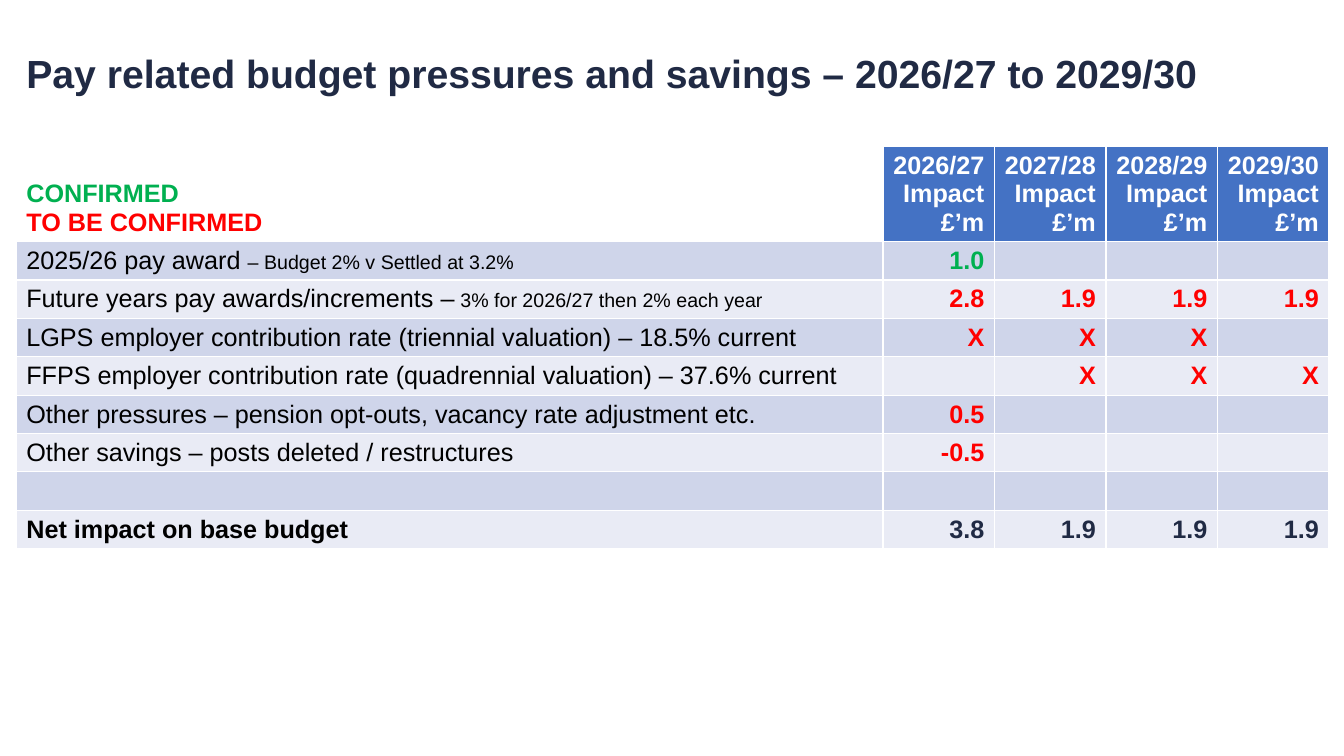
from lxml.etree import SubElement
from pptx import Presentation
from pptx.dml.color import RGBColor
from pptx.enum.text import MSO_ANCHOR, MSO_AUTO_SIZE, PP_ALIGN
from pptx.oxml.ns import qn
from pptx.util import Cm, Pt

FONT = "Arial"
NAVY = RGBColor(0x20, 0x2A, 0x44)
BLUE = RGBColor(0x44, 0x72, 0xC4)
GREEN = RGBColor(0x00, 0xB0, 0x50)
RED = RGBColor(0xFF, 0x00, 0x00)
BLACK = RGBColor(0x00, 0x00, 0x00)
WHITE = RGBColor(0xFF, 0xFF, 0xFF)
BANDS = RGBColor(0xCF, 0xD5, 0xEA), RGBColor(0xE9, 0xEB, 0xF5)

YEARS = "2026/27", "2027/28", "2028/29", "2029/30"
ITEMS = [
    ("2025/26 pay award ", "– Budget 2% v Settled at 3.2%", ["1.0", "", "", ""], GREEN),
    ("Future years pay awards/increments –", " 3% for 2026/27 then 2% each year",
     ["2.8", "1.9", "1.9", "1.9"], RED),
    ("LGPS employer contribution rate (triennial valuation) – 18.5% current", "",
     ["X", "X", "X", ""], RED),
    ("FFPS employer contribution rate (quadrennial valuation) – 37.6% current", "",
     ["", "X", "X", "X"], RED),
    ("Other pressures – pension opt-outs, vacancy rate adjustment etc.", "",
     ["0.5", "", "", ""], RED),
    ("Other savings – posts deleted / restructures", "", ["-0.5", "", "", ""], RED),
    ("", "", ["", "", "", ""], BLACK),
    ("Net impact on base budget", "", ["3.8", "1.9", "1.9", "1.9"], NAVY),
]


def add_run(para, text, color, size=18, bold=True):
    """Append one formatted run to a paragraph."""
    run = para.add_run()
    run.text = text
    font = run.font
    font.name, font.size, font.bold = FONT, Pt(size), bold
    font.color.rgb = color


def fill_cell(cell, fill, lines, align=PP_ALIGN.LEFT):
    """Fill a cell with lines, each a list of run settings."""
    cell.fill.solid()
    cell.fill.fore_color.rgb = fill
    frame = cell.text_frame
    for i, line in enumerate(lines):
        para = frame.add_paragraph() if i else frame.paragraphs[0]
        para.alignment = align
        runs = [run for run in line if run[0]]
        for run in runs:
            add_run(para, *run)
        if not runs:
            end = SubElement(para._p, qn("a:endParaRPr"), sz="1800")
            SubElement(end, qn("a:latin"), typeface=FONT)


def add_title(slide, left, top, width, height):
    """Place the slide title in its box."""
    title = slide.shapes.title
    title.left, title.top, title.width, title.height = left, top, width, height
    frame = title.text_frame
    frame.word_wrap = True
    frame.auto_size = MSO_AUTO_SIZE.NONE
    frame.vertical_anchor = MSO_ANCHOR.MIDDLE
    para = frame.paragraphs[0]
    para.alignment = PP_ALIGN.LEFT
    para.line_spacing = 0.9
    add_run(para, "Pay related budget pressures and savings – 2026/27 to 2029/30", NAVY, 28)


def add_budget(slide, left, top, width, height):
    """Place the budget table in its box."""
    year, head = Cm(2.81), Cm(2.36)
    table = slide.shapes.add_table(
        len(ITEMS) + 1, len(YEARS) + 1, left, top, width, height).table
    for col in table.columns:
        col.width = year
    table.columns[0].width = width - year * len(YEARS)
    for row in table.rows:
        row.height = (height - head) // len(ITEMS)
    table.rows[0].height = head

    key = table.cell(0, 0)
    key.vertical_anchor = MSO_ANCHOR.BOTTOM
    fill_cell(key, WHITE, [[("CONFIRMED", GREEN)], [("TO BE CONFIRMED", RED)]])
    for c, name in enumerate(YEARS, 1):
        lines = [[(text, WHITE)] for text in (name, "Impact", "£’m")]
        fill_cell(table.cell(0, c), BLUE, lines, PP_ALIGN.RIGHT)

    for r, (label, note, values, color) in enumerate(ITEMS, 1):
        band = BANDS[(r - 1) % 2]
        bold = r == len(ITEMS)
        fill_cell(table.cell(r, 0), band,
                  [[(label, BLACK, 18, bold), (note, BLACK, 14, bold)]])
        for c, value in enumerate(values, 1):
            fill_cell(table.cell(r, c), band, [[(value, color)]], PP_ALIGN.RIGHT)


def main():
    """Build and save the slide."""
    deck = Presentation()
    deck.slide_width, deck.slide_height = Cm(33.87), Cm(19.05)
    slide = deck.slides.add_slide(deck.slide_layouts[5])
    add_title(slide, Cm(0.41), Cm(0.94), Cm(31.22), Cm(1.96))
    add_budget(slide, Cm(0.41), Cm(3.7), Cm(33.08), Cm(10.1))
    deck.save("out.pptx")


if __name__ == "__main__":
    main()
